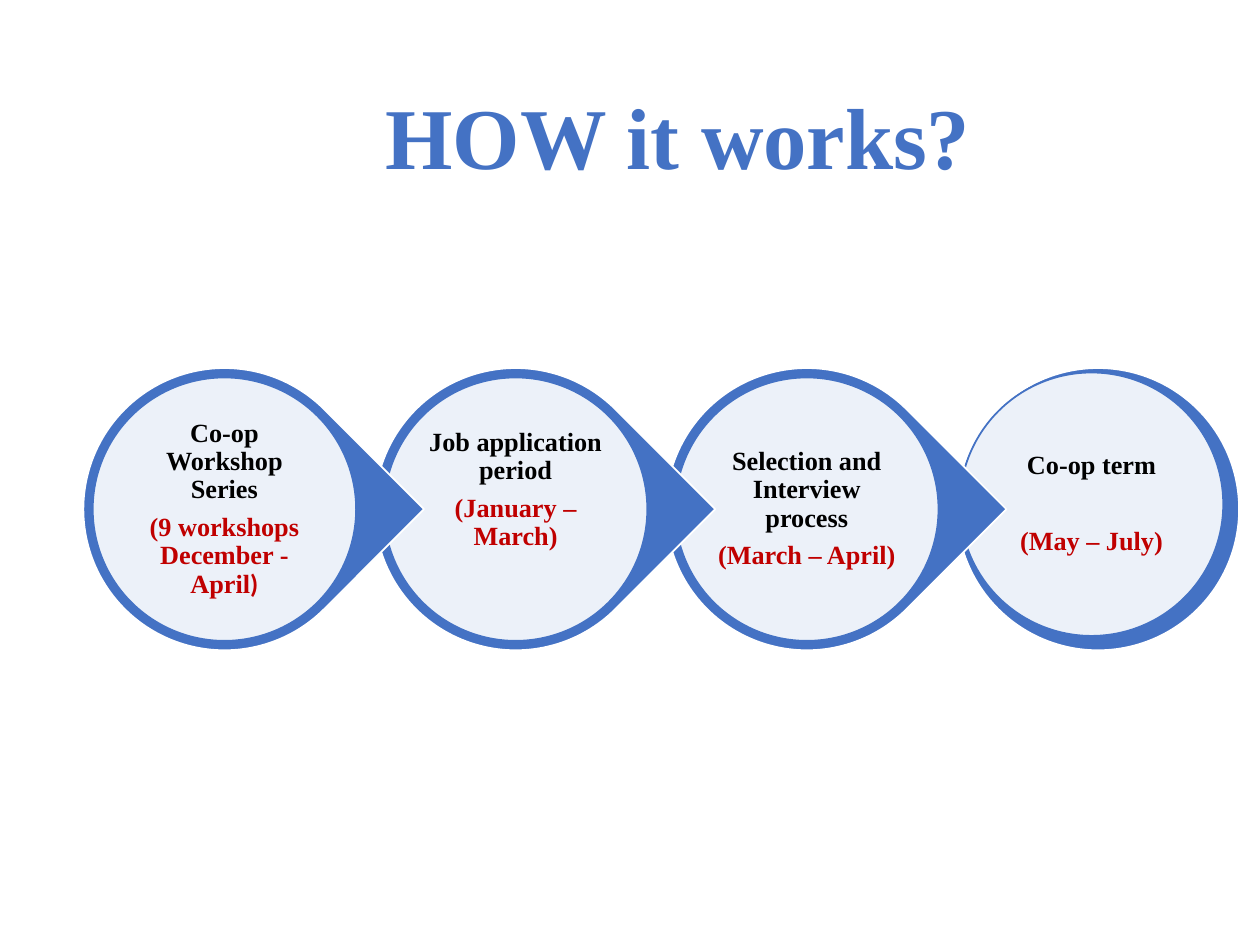
from lxml.etree import SubElement
from pptx import Presentation
from pptx.dml.color import RGBColor
from pptx.enum.shapes import MSO_SHAPE
from pptx.enum.text import MSO_ANCHOR, PP_ALIGN
from pptx.oxml.ns import qn
from pptx.util import Cm, Pt

BLUE = RGBColor(0x44, 0x72, 0xC4)
RED = RGBColor(0xC0, 0x00, 0x00)
BLACK = RGBColor(0x00, 0x00, 0x00)
WHITE = RGBColor(0xFF, 0xFF, 0xFF)
SERIF = "Times New Roman"

LEFT, TOP, PITCH = 1.68, 7.42, 5.87
OUTER, INNER = 5.69, 5.31
RING = (OUTER - INNER) / 2

# Step name, runs of its date line, gap before the dates (pt), bottom inset (cm)
STEPS = [
    ("Co-op Workshop Series",
     [("(9 workshops December - April", SERIF), (")", "Calibri")], 5.25, 0.05),
    ("Job application period", [("(January – March)", SERIF)], 5.25, 0.82),
    ("Selection and Interview process", [("(March – April)", SERIF)], 5.25, 0.05),
    ("Co-op term", [("(May – July)", SERIF)], 27, 0.05),
]


def add_disc(kind, left, top, size, fill, line):
    sp = s.shapes.add_shape(kind, Cm(left), Cm(top), Cm(size), Cm(size))
    sp.shadow.inherit = False
    sp.fill.solid()
    sp.fill.fore_color.rgb = fill
    sp.line.color.rgb = line
    sp.line.width = Pt(1)
    return sp


def add_run(p, text, font, size, color):
    r = p.add_run()
    r.text = text
    r.font.name = font
    r.font.size = Pt(size)
    r.font.bold = True
    r.font.color.rgb = color


prs = Presentation()
prs.slide_width, prs.slide_height = Cm(25.4), Cm(19.05)
s = prs.slides.add_slide(prs.slide_layouts[5])

title = s.shapes.title
title.left, title.top, title.width, title.height = Cm(1.75), Cm(1.02), Cm(21.9), Cm(3.68)
tf = title.text_frame
tf.vertical_anchor = MSO_ANCHOR.MIDDLE
tf.margin_left = Cm(6.02)
p = tf.paragraphs[0]
p.alignment = PP_ALIGN.LEFT
p.line_spacing = 0.9
add_run(p, "HOW it works?", SERIF, 49.5, BLUE)

# Right to left, so that each drop's point lies over the next step
last = len(STEPS) - 1
for i, (name, dates, gap, bottom) in reversed(list(enumerate(STEPS))):
    left = LEFT + i * PITCH
    if i == last:
        add_disc(MSO_SHAPE.OVAL, left, TOP, OUTER, BLUE, WHITE)
        disc = add_disc(MSO_SHAPE.OVAL, left + 0.06, TOP + 0.09, INNER, WHITE, BLUE)
    else:
        drop = add_disc(MSO_SHAPE.TEAR, left, TOP, OUTER, BLUE, WHITE)
        drop.adjustments[0] = 1
        drop.rotation = 45
        disc = add_disc(MSO_SHAPE.OVAL, left + RING, TOP + RING, INNER, WHITE, BLUE)
    color = disc.fill._xPr.find(qn("a:solidFill"))[0]
    SubElement(color, qn("a:alpha"), val="90000")

    tf = disc.text_frame
    tf.word_wrap = True
    tf.vertical_anchor = MSO_ANCHOR.MIDDLE
    tf.margin_left = tf.margin_right = tf.margin_top = Cm(0.05)
    tf.margin_bottom = Cm(bottom)
    p = tf.paragraphs[0]
    p.alignment = PP_ALIGN.CENTER
    p.line_spacing = 0.9
    add_run(p, name, SERIF, 15, BLACK)
    p = tf.add_paragraph()
    p.alignment = PP_ALIGN.CENTER
    p.line_spacing = 0.9
    p.space_before = Pt(gap)
    for text, font in dates:
        add_run(p, text, font, 15, RED)

prs.save("out.pptx")
